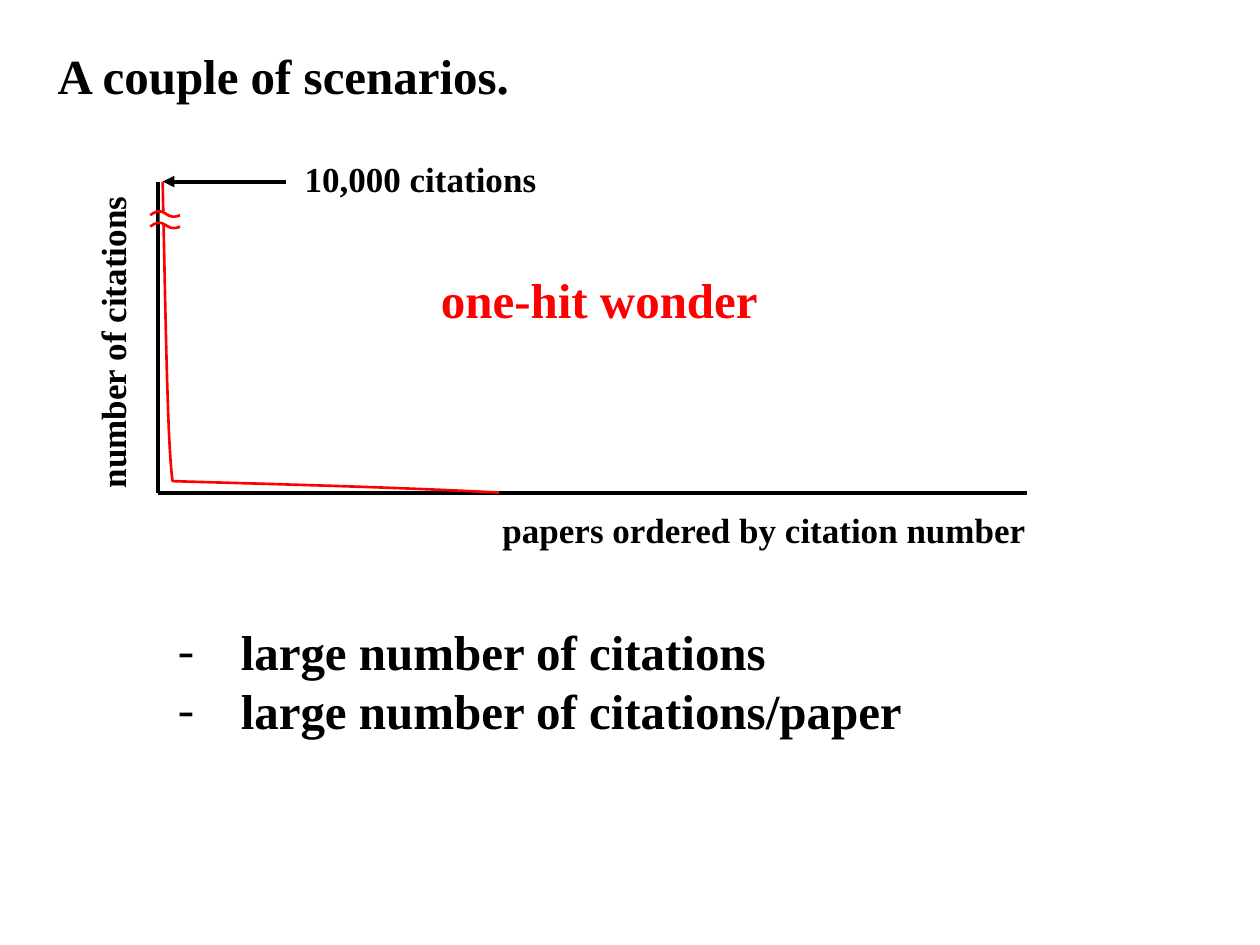
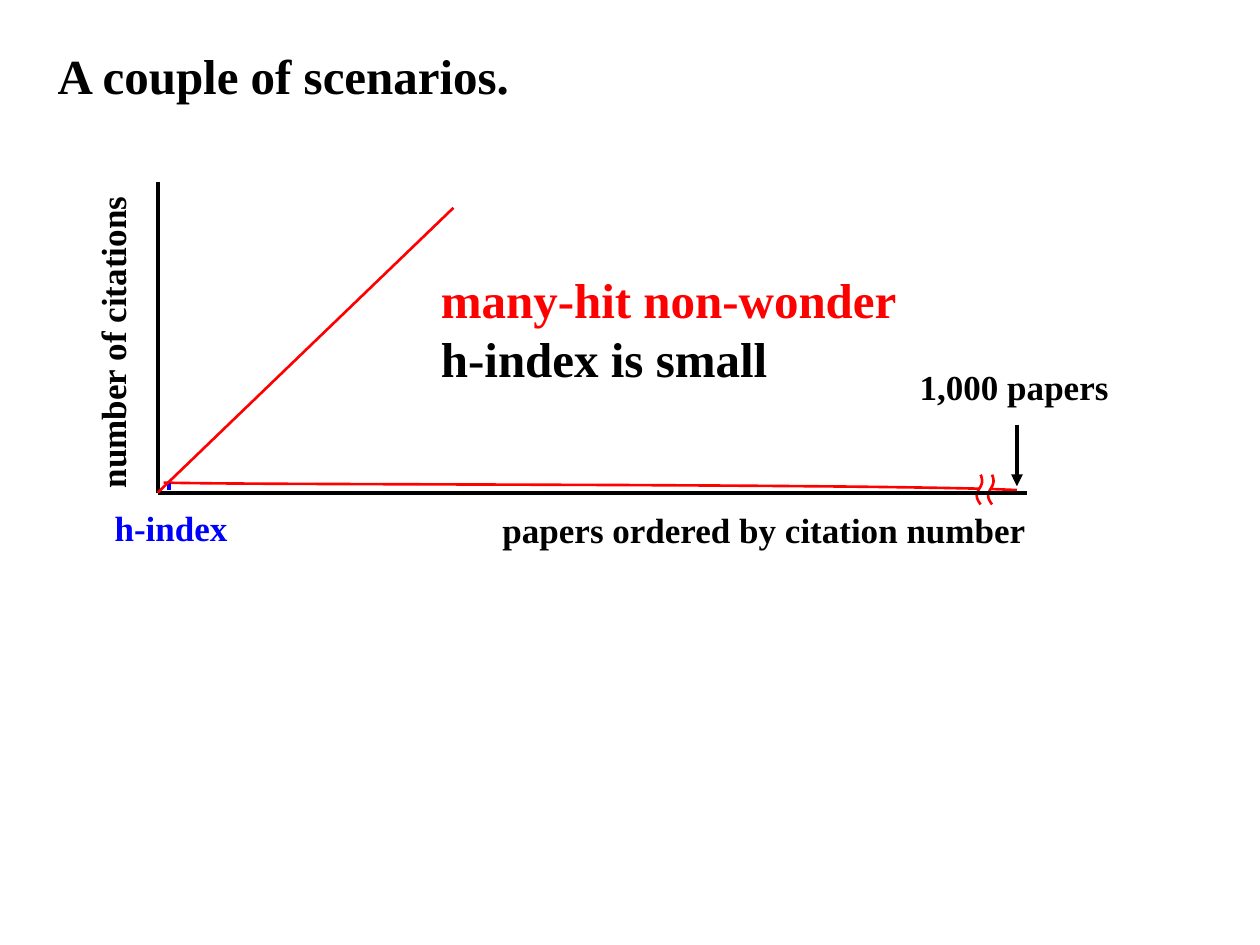
from lxml.etree import SubElement
from pptx import Presentation
from pptx.dml.color import RGBColor
from pptx.enum.shapes import MSO_CONNECTOR
from pptx.enum.text import MSO_ANCHOR, MSO_AUTO_SIZE, PP_ALIGN
from pptx.oxml.ns import qn
from pptx.util import Cm, Pt

# Content: labels are (lines with colour, size, box in cm, rotation)
TITLE = "A couple of scenarios."
TITLE_BOX = (0.91, 0.79, 9.7, 1.45)
AXIS_LABELS = [
    ([("number of citations", "black")], 20, (-0.94, 6.32, 6.43, 1.12), 270),
    ([("papers ordered by citation number", "black")], 20, (9.88, 10.13, 11.13, 1.12), 0),
]
ONE_HIT_LABELS = [
    ([("10,000 citations", "black")], 20, (5.89, 3.05, 5.21, 1.12), 0),
    ([("one-hit wonder", "red")], 28, (8.64, 5.31, 6.99, 1.45), 0),
]
MANY_HIT_LABELS = [
    ([("many-hit non-wonder", "red"), ("h-index is small", "black")], 28,
     (8.64, 5.31, 9.8, 2.64), 0),
    ([("1,000 papers", "black")], 20, (18.29, 7.24, 4.34, 1.12), 0),
    ([("h-index", "blue")], 20, (2.06, 10.08, 2.79, 1.12), 0),
]
FINDINGS = ["large number of citations", "large number of citations/paper"]
FINDINGS_BOX = (3.33, 12.4, 15.27, 2.64)

# Diagram geometry in cm; each curve is a start followed by cubic control triples
ORIGIN, AXIS_TOP, AXIS_END = (3.18, 9.93), (3.18, 3.66), (20.7, 9.93)
ONE_HIT_CURVE = [(10.06, 9.93), (7.47, 9.8), (4.98, 9.75), (3.48, 9.7),
                 (3.38, 8.97), (3.35, 6.88), (3.28, 3.66)]
MANY_HIT_CURVE = [(20.5, 9.88), (17.91, 9.75), (4.8, 9.78), (3.3, 9.73)]
WAVE = [(0.3, 0), (0, 0.13), (0, -0.23), (-0.3, 0)]
BREAK_GAP = [(-0.1, -0.05), (-0.1, 0.15), (0.1, 0.23), (0.08, 0.03)]
WAVE_STEP = 0.23

# Shared style
FONT = "Times New Roman"
COLORS = {"black": "000000", "red": "FF0000", "blue": "0000FF", "white": "FFFFFF"}


def color(name):
    return RGBColor.from_string(COLORS[name])


def place(shape, box):
    shape.left, shape.top, shape.width, shape.height = (Cm(length) for length in box)


def write(shape, lines, size):
    frame = shape.text_frame
    frame.word_wrap = False
    frame.auto_size = MSO_AUTO_SIZE.NONE
    frame.vertical_anchor = MSO_ANCHOR.TOP
    frame.text = "\n".join(text for text, _ in lines)
    for paragraph, (_, color_name) in zip(frame.paragraphs, lines):
        paragraph.alignment = PP_ALIGN.LEFT
        paragraph.space_before = Pt(0)
        font = paragraph.font
        font.name, font.size, font.bold = FONT, Pt(size), True
        font.color.rgb = color(color_name)


def add_labels(slide, labels):
    for lines, size, box, rotation in labels:
        shape = slide.shapes.add_textbox(*(Cm(length) for length in box))
        shape.rotation = rotation
        write(shape, lines, size)


def add_line(slide, start, end, color_name="black", width=2.25, arrow=False):
    connector = slide.shapes.add_connector(
        MSO_CONNECTOR.STRAIGHT, *(Cm(length) for length in start + end))
    connector.line.color.rgb = color(color_name)
    connector.line.width = Pt(width)
    if arrow:
        SubElement(connector.line._get_or_add_ln(), qn("a:tailEnd"), type="triangle")
    SubElement(connector._element.spPr, qn("a:effectLst"))


def add_outline(slide, points, color_name, width, filled=False):
    (x, y), *rest = [(Cm(x), Cm(y)) for x, y in points]
    builder = slide.shapes.build_freeform(x, y)
    builder.add_line_segments(rest, close=filled)
    shape = builder.convert_to_shape()
    shape.shadow.inherit = False
    shape.line.color.rgb = color(color_name)
    shape.line.width = Pt(width)
    if filled:
        shape.fill.solid()
        shape.fill.fore_color.rgb = color(color_name)
    else:
        shape.fill.background()


def bezier(controls, steps=24):
    """Points along a chain of cubic curves."""
    points = [controls[0]]
    for first in range(0, len(controls) - 1, 3):
        segment = controls[first:first + 4]
        for step in range(1, steps + 1):
            t = step / steps
            weights = ((1 - t) ** 3, 3 * t * (1 - t) ** 2, 3 * t * t * (1 - t), t ** 3)
            points.append(tuple(sum(weight * point[axis] for weight, point in zip(weights, segment))
                                for axis in (0, 1)))
    return points


def add_curve(slide, controls):
    add_outline(slide, bezier(controls), "red", 1.5)


def add_break(slide, center, turned=False):
    """White gap between two waves, turned a quarter to the left on request."""
    def locate(offsets, shift=0):
        moved = [(x, y + shift) for x, y in offsets]
        if turned:
            moved = [(y, -x) for x, y in moved]
        return [(center[0] + x, center[1] + y) for x, y in moved]

    add_outline(slide, locate(BREAK_GAP), "white", 0.75, filled=True)
    for shift in (0, WAVE_STEP):
        add_curve(slide, locate(WAVE, shift))


def add_axes(slide):
    add_line(slide, AXIS_TOP, ORIGIN)
    add_line(slide, ORIGIN, AXIS_END)
    add_labels(slide, AXIS_LABELS)


def add_slide(presentation, layout):
    slide = presentation.slides.add_slide(presentation.slide_layouts[layout])
    place(slide.shapes.title, TITLE_BOX)
    write(slide.shapes.title, [(TITLE, "black")], 28)
    return slide


def add_findings(slide):
    body = slide.placeholders[1]
    place(body, FINDINGS_BOX)
    write(body, [(text, "black") for text in FINDINGS], 28)
    for paragraph in body.text_frame.paragraphs:
        properties = paragraph._p.get_or_add_pPr()
        properties.set("marL", str(Cm(1.27)))
        properties.set("indent", str(-Cm(1.27)))
        # Bullet elements come before the default run properties
        defaults = properties.find(qn("a:defRPr"))
        for tag, attributes in (("a:buFont", {"typeface": FONT}), ("a:buChar", {"char": "-"})):
            defaults.addprevious(SubElement(properties, qn(tag), attributes))


def main():
    presentation = Presentation()
    presentation.slide_width, presentation.slide_height = Cm(25.4), Cm(19.05)

    # One paper with all the citations
    slide = add_slide(presentation, 1)
    add_axes(slide)
    add_curve(slide, ONE_HIT_CURVE)
    add_break(slide, (3.33, 4.34))
    add_line(slide, (5.77, 3.66), (3.28, 3.66), arrow=True)
    add_labels(slide, ONE_HIT_LABELS)
    add_findings(slide)

    # Many papers with few citations each
    slide = add_slide(presentation, 5)
    add_curve(slide, MANY_HIT_CURVE)
    add_break(slide, (19.77, 9.87), turned=True)
    add_axes(slide)
    add_line(slide, (20.5, 8.56), (20.5, 9.8), arrow=True)
    add_line(slide, (3.4, 9.73), (3.4, 9.88), "blue")
    add_labels(slide, MANY_HIT_LABELS)
    add_line(slide, ORIGIN, (9.14, 4.19), "red", 1.5)

    presentation.save("out.pptx")


if __name__ == "__main__":
    main()
